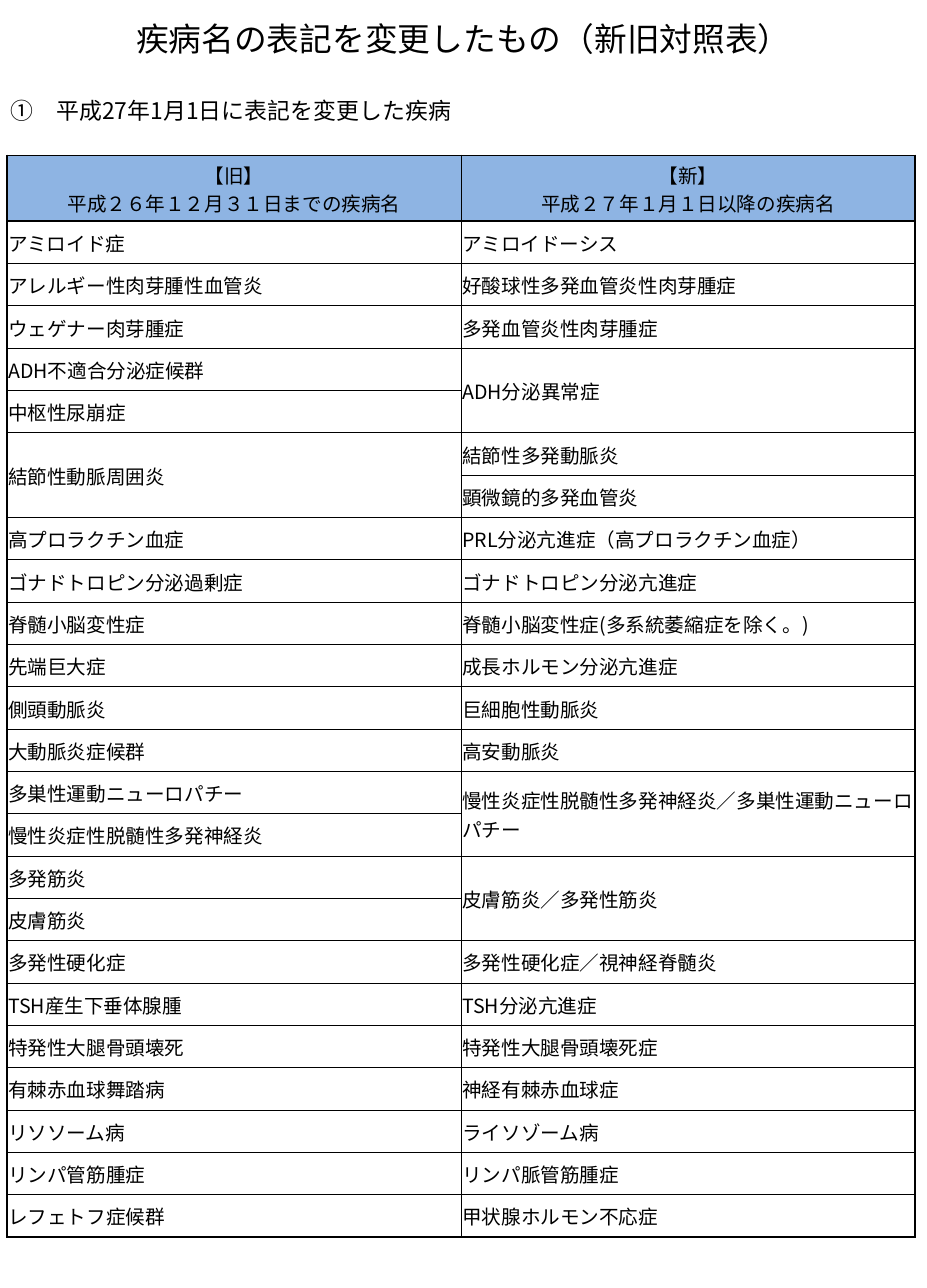
from copy import deepcopy
from dataclasses import dataclass

from lxml.etree import SubElement
from pptx import Presentation
from pptx.dml.color import RGBColor
from pptx.enum.text import MSO_ANCHOR, PP_ALIGN
from pptx.oxml.ns import qn
from pptx.util import Inches, Pt

FONT = "Noto Sans CJK JP"
BLACK, WHITE, HEADER_BLUE = "000000", "FFFFFF", "8EB4E3"
THIN, THICK = 0.5, 1
HEADER_H, ROW_H, COL_W = 0.56, 0.36, 3.86


@dataclass
class Rename:
    """One table row; an empty name continues the cell above it."""
    old: str
    new: str


HEADER = Rename("【旧】\n平成２６年１２月３１日までの疾病名",
                "【新】\n平成２７年１月１日以降の疾病名")
RENAMES = [
    Rename("アミロイド症", "アミロイドーシス"),
    Rename("アレルギー性肉芽腫性血管炎", "好酸球性多発血管炎性肉芽腫症"),
    Rename("ウェゲナー肉芽腫症", "多発血管炎性肉芽腫症"),
    Rename("ADH不適合分泌症候群", "ADH分泌異常症"),
    Rename("中枢性尿崩症", ""),
    Rename("結節性動脈周囲炎", "結節性多発動脈炎"),
    Rename("", "顕微鏡的多発血管炎"),
    Rename("高プロラクチン血症", "PRL分泌亢進症（高プロラクチン血症）"),
    Rename("ゴナドトロピン分泌過剰症", "ゴナドトロピン分泌亢進症"),
    Rename("脊髄小脳変性症", "脊髄小脳変性症(多系統萎縮症を除く。)"),
    Rename("先端巨大症", "成長ホルモン分泌亢進症"),
    Rename("側頭動脈炎", "巨細胞性動脈炎"),
    Rename("大動脈炎症候群", "高安動脈炎"),
    Rename("多巣性運動ニューロパチー", "慢性炎症性脱髄性多発神経炎／多巣性運動ニューロパチー"),
    Rename("慢性炎症性脱髄性多発神経炎", ""),
    Rename("多発筋炎", "皮膚筋炎／多発性筋炎"),
    Rename("皮膚筋炎", ""),
    Rename("多発性硬化症", "多発性硬化症／視神経脊髄炎"),
    Rename("TSH産生下垂体腺腫", "TSH分泌亢進症"),
    Rename("特発性大腿骨頭壊死", "特発性大腿骨頭壊死症"),
    Rename("有棘赤血球舞踏病", "神経有棘赤血球症"),
    Rename("リソソーム病", "ライソゾーム病"),
    Rename("リンパ管筋腫症", "リンパ脈管筋腫症"),
    Rename("レフェトフ症候群", "甲状腺ホルモン不応症"),
]


def rgb(color: str) -> RGBColor:
    return RGBColor.from_string(color)


def write(tf, text: str, size: float = 12, align=PP_ALIGN.LEFT, color: str = BLACK) -> None:
    """Fill the first paragraph; a newline becomes a line break."""
    p = tf.paragraphs[0]
    p.alignment = align
    for i, line in enumerate(text.split("\n")):
        if i:
            p.add_line_break()
        r = p.add_run()
        r.text = line
        r.font.size = Pt(size)
        r.font.name = FONT
        r.font.color.rgb = rgb(color)
        SubElement(r.font._element, qn("a:ea"), typeface=FONT)
    for br in p._p.findall(qn("a:br")):
        br.append(deepcopy(p.runs[0].font._element))


def set_borders(cell, left: float, right: float, top: float, bottom: float) -> None:
    tcPr = cell._tc.get_or_add_tcPr()
    for side, width in zip("LRTB", (left, right, top, bottom)):
        ln = SubElement(tcPr, qn(f"a:ln{side}"), w=str(Pt(width)))
        fill = SubElement(ln, qn("a:solidFill"))
        SubElement(fill, qn("a:srgbClr"), val=BLACK)


def format_cell(cell, row: int, col: int, last_row: int) -> None:
    cell.margin_left = cell.margin_right = cell.margin_top = Inches(0.01)
    cell.margin_bottom = 0
    cell.vertical_anchor = MSO_ANCHOR.MIDDLE
    set_borders(cell,
                left=THIN if col else THICK,
                right=THICK if col else THIN,
                top=THICK if row <= 1 else THIN,
                bottom=THICK if row in (0, last_row) else THIN)
    cell.fill.solid()
    cell.fill.fore_color.rgb = rgb(WHITE if row else HEADER_BLUE)


def add_rename_table(slide) -> None:
    rows = [HEADER, *RENAMES]
    height = HEADER_H + ROW_H * len(RENAMES)
    table = slide.shapes.add_table(len(rows), 2, Inches(0.06), Inches(1.32),
                                   Inches(2 * COL_W), Inches(height)).table
    table.first_row = table.horz_banding = False
    for column in table.columns:
        column.width = Inches(COL_W)
    for i, rename in enumerate(rows):
        table.rows[i].height = Inches(ROW_H if i else HEADER_H)
        for j, name in enumerate((rename.old, rename.new)):
            cell = table.cell(i, j)
            format_cell(cell, i, j, len(rows) - 1)
            if name:
                write(cell.text_frame, name, align=PP_ALIGN.LEFT if i else PP_ALIGN.CENTER)
            else:
                table.cell(i - 1, j).merge(cell)


def place(sp, left: float, top: float, width: float, height: float) -> None:
    sp.left, sp.top, sp.width, sp.height = map(Inches, (left, top, width, height))


def main() -> None:
    prs = Presentation()
    prs.slide_width, prs.slide_height = Inches(7.88), Inches(10.95)
    slide = prs.slides.add_slide(prs.slide_layouts[5])

    title = slide.shapes.title
    place(title, 0.08, 0.11, 7.72, 0.44)
    title.text_frame.vertical_anchor = MSO_ANCHOR.MIDDLE
    write(title.text_frame, "疾病名の表記を変更したもの（新旧対照表）", size=20, align=PP_ALIGN.CENTER)

    add_rename_table(slide)

    heading = slide.shapes.add_textbox(0, 0, 0, 0)
    place(heading, -0.01, 0.77, 5, 0.34)
    heading.text_frame.word_wrap = True
    heading.text_frame.vertical_anchor = MSO_ANCHOR.MIDDLE
    write(heading.text_frame, "①　平成27年1月1日に表記を変更した疾病", size=14)

    prs.save("out.pptx")


if __name__ == "__main__":
    main()
